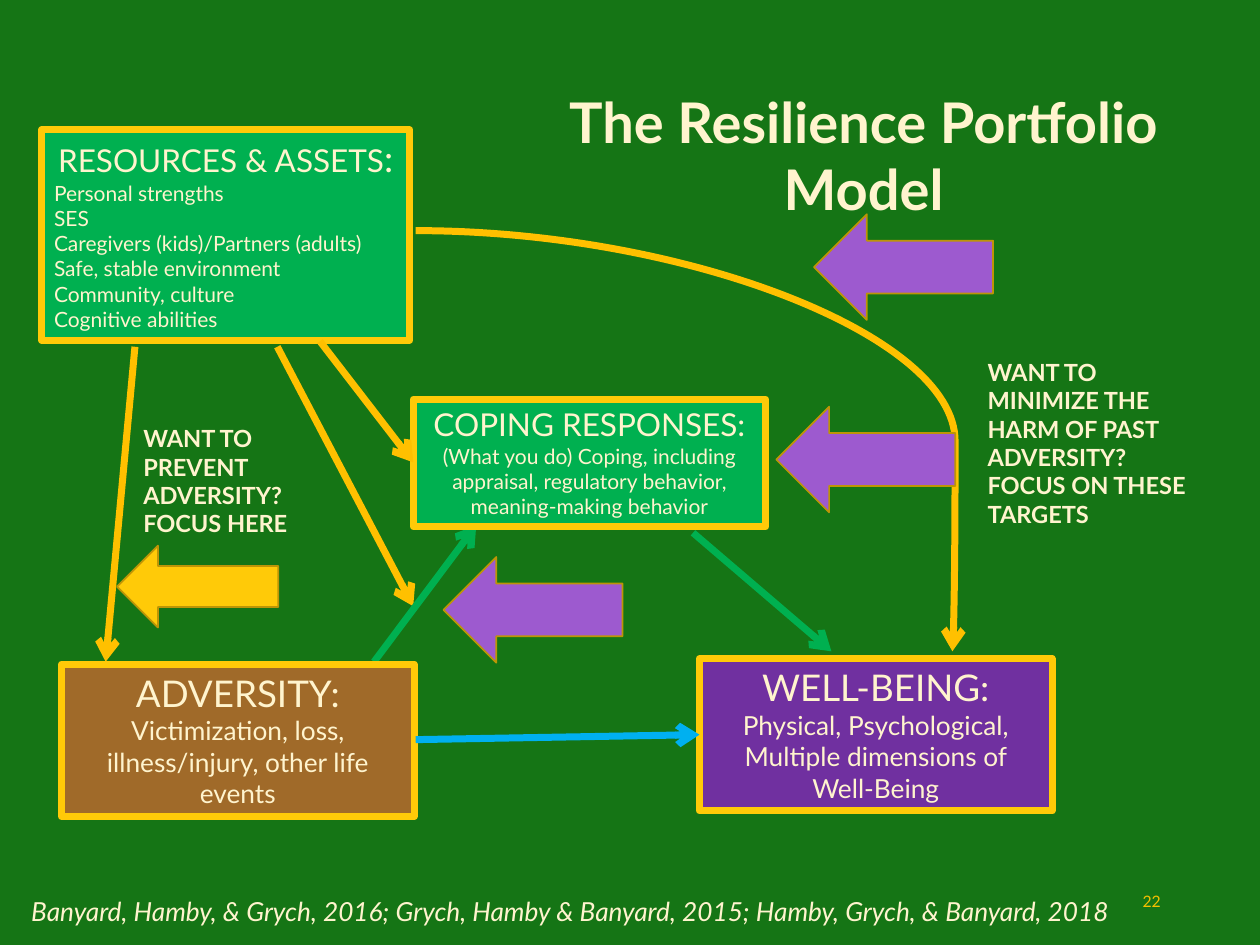
from dataclasses import dataclass
from lxml.etree import SubElement
from pptx import Presentation
from pptx.dml.color import RGBColor
from pptx.enum.shapes import MSO_CONNECTOR, MSO_SHAPE
from pptx.enum.text import MSO_ANCHOR, MSO_AUTO_SIZE, PP_ALIGN
from pptx.oxml.ns import qn
from pptx.slide import Slide
from pptx.util import Cm, Pt

GOLD, AMBER, RIM = "FFCA08", "FFC000", "BD9506"
GREEN, PURPLE, BLUE = "00B050", "9D5ACF", "00B0F0"


def color(code):
    return RGBColor.from_string(code)


@dataclass
class Board:
    slide: Slide
    face: str = "Lato"
    ink: str = "FFF4CE"

    def style(self, par, size, align=PP_ALIGN.LEFT, bold=False, slant=False, ink=None):
        par.alignment = align
        font = par.font
        font.name, font.size = self.face, Pt(size)
        font.bold, font.italic = bold, slant
        font.color.rgb = color(ink or self.ink)

    def title(self, text, *area):
        shape = self.slide.shapes.title
        shape.left, shape.top, shape.width, shape.height = map(Cm, area)
        frame = shape.text_frame
        frame.text = text
        frame.auto_size = MSO_AUTO_SIZE.NONE
        frame.vertical_anchor = MSO_ANCHOR.TOP
        self.style(frame.paragraphs[0], 32, PP_ALIGN.CENTER, bold=True)

    def text(self, text, area, size, anchor=MSO_ANCHOR.TOP, **look):
        frame = self.slide.shapes.add_textbox(*map(Cm, area)).text_frame
        frame.word_wrap = True
        frame.vertical_anchor = anchor
        frame.text = text
        self.style(frame.paragraphs[0], size, **look)

    def shape(self, kind, area, fill, edge, width):
        shape = self.slide.shapes.add_shape(kind, *map(Cm, area))
        shape.shadow.inherit = False
        shape.fill.solid()
        shape.fill.fore_color.rgb = color(fill)
        shape.line.color.rgb = color(edge)
        shape.line.width = Pt(width)
        return shape

    def box(self, area, fill, head, big, lines, small, align=PP_ALIGN.CENTER, mark=None):
        frame = self.shape(MSO_SHAPE.RECTANGLE, area, fill, GOLD, 4).text_frame
        frame.word_wrap = True
        frame.vertical_anchor = MSO_ANCHOR.TOP
        first = frame.paragraphs[0]
        first.add_run().text = head
        self.style(first, big, PP_ALIGN.CENTER)
        if mark:
            run = first.add_run()
            run.text = ":"
            run.font.size = Pt(mark)
        for line in lines:
            par = frame.add_paragraph()
            par.text = line
            self.style(par, small, align)

    def block(self, area, fill):
        self.shape(MSO_SHAPE.LEFT_ARROW, area, fill, RIM, 1)

    def arrow(self, ends, ink, kind=MSO_CONNECTOR.STRAIGHT, bend=None):
        link = self.slide.shapes.add_connector(kind, *map(Cm, ends))
        link.line.color.rgb = color(ink)
        link.line.width = Pt(4)
        props = link.line._get_or_add_ln()
        SubElement(props, qn("a:tailEnd"), type="arrow")
        SubElement(link._element.spPr, qn("a:effectLst"))
        if bend:
            guides = link._element.spPr.find(qn("a:prstGeom")).get_or_add_avLst()
            SubElement(guides, qn("a:gd"), name="adj1", fmla=f"val {bend}")


def main():
    deck = Presentation()
    deck.slide_width, deck.slide_height = Cm(25.4), Cm(19.05)
    slide = deck.slides.add_slide(deck.slide_layouts[5])
    slide.background.fill.solid()
    slide.background.fill.fore_color.rgb = color("157515")
    board = Board(slide)

    board.title("The Resilience Portfolio Model", 9.75, 1.63, 15.32, 1.63)
    board.arrow((5.59, 6.99, 8.33, 12.22), AMBER)
    board.arrow((7.54, 13.34, 9.6, 10.59), GREEN)

    board.box((8.33, 8.05, 7.11, 2.57), GREEN, "COPING RESPONSES:", 18,
              ["(What you do) Coping, including appraisal, regulatory behavior, "
               "meaning-making behavior"], 12)
    board.box((14.1, 13.28, 7.11, 3.07), "7030A0", "WELL-BEING:", 21,
              ["Physical, Psychological, Multiple dimensions of Well-Being"], 15)
    board.box((1.24, 13.39, 7.11, 3.07), "A06A29", "ADVERSITY:", 21,
              ["Victimization, loss, illness/injury, other life events"], 15)
    board.box((0.84, 2.62, 7.42, 4.24), GREEN, "RESOURCES & ASSETS", 18,
              ["Personal strengths", "SES", "Caregivers (kids)/Partners (adults)",
               "Safe, stable environment", "Community, culture",
               "Cognitive abilities"], 12, PP_ALIGN.LEFT, mark=21)

    for ends, ink in [
        ((2.72, 6.99, 2.13, 13.34), AMBER),
        ((13.97, 10.74, 16.76, 13.13), GREEN),
        ((8.38, 14.91, 14.1, 14.81), BLUE),
        ((6.45, 6.88, 8.33, 9.32), AMBER),
    ]:
        board.arrow(ends, ink)
    board.arrow((8.38, 4.65, 19.2, 13.13), AMBER, MSO_CONNECTOR.CURVE, 100500)

    board.block((2.36, 11, 3.25, 1.65), GOLD)
    for left, top in [(8.94, 11.23), (15.65, 8.2), (16.41, 4.32)]:
        board.block((left, top, 3.61, 2.13), PURPLE)

    board.text("WANT TO PREVENT ADVERSITY? FOCUS HERE",
               (2.64, 8.43, 3.81, 2.57), 13.5, bold=True)
    board.text("WANT TO MINIMIZE THE HARM OF PAST ADVERSITY? FOCUS ON THESE TARGETS",
               (19.66, 7.09, 4.93, 2.57), 13.5, bold=True)
    board.text("22", (17.93, 17.65, 5.72, 1.02), 9, MSO_ANCHOR.MIDDLE,
               align=PP_ALIGN.RIGHT, ink="F5C000")
    board.text("Banyard, Hamby, & Grych, 2016; Grych, Hamby & Banyard, 2015; "
               "Hamby, Grych, & Banyard, 2018",
               (0.38, 17.93, 24.23, 0.89), 15, slant=True)
    deck.save("out.pptx")


if __name__ == "__main__":
    main()
